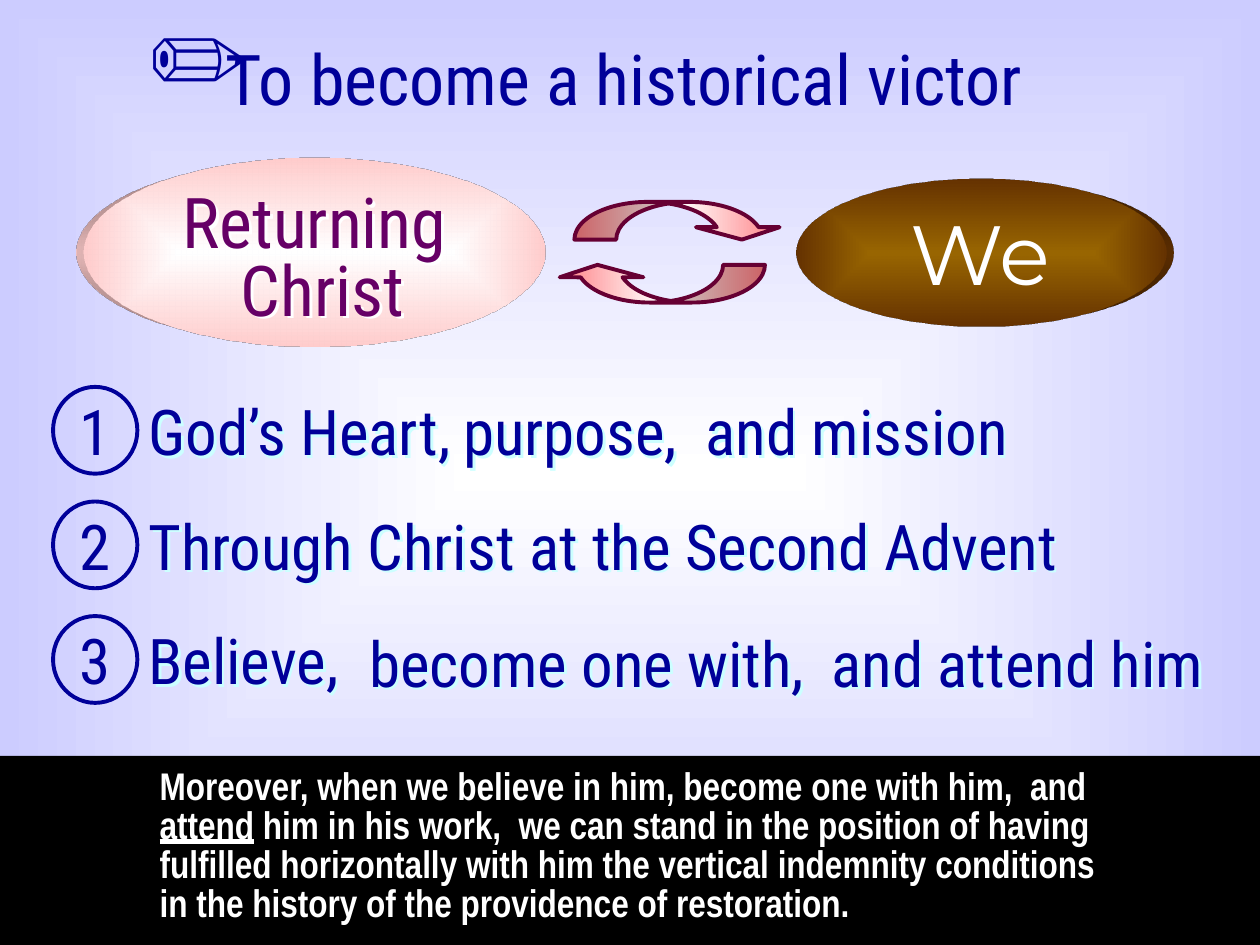
from lxml import etree
from pptx import Presentation
from pptx.dml.color import RGBColor
from pptx.enum.shapes import MSO_SHAPE
from pptx.enum.text import MSO_ANCHOR, MSO_AUTO_SIZE, PP_ALIGN
from pptx.oxml import parse_xml
from pptx.oxml.ns import qn
from pptx.util import Cm, Pt

RECT, OVAL, CURVE = MSO_SHAPE.RECTANGLE, MSO_SHAPE.OVAL, MSO_SHAPE.CURVED_LEFT_ARROW
MIDDLE, TOP = MSO_ANCHOR.MIDDLE, MSO_ANCHOR.TOP
LEFT, CENTER = PP_ALIGN.LEFT, PP_ALIGN.CENTER
GROW = MSO_AUTO_SIZE.SHAPE_TO_FIT_TEXT
ROBOTO = "Roboto Condensed"
NS = 'xmlns:a="http://schemas.openxmlformats.org/drawingml/2006/main"'
HEX = {
    "navy": "000099", "white": "FFFFFF", "black": "000000", "lilac": "CCCCFF",
    "pink": "FFCCCC", "plum": "660066", "gold": "996600", "brown": "663300",
    "coral": "FF7C80", "wine": "660033", "ice": "CCFFFF",
}
FIRST, PITCH = 7.8, 2.31
ROWS = [
    [(2.74, 6.78, 0, "God’s Heart,"), (9.09, 5.08, 0, "purpose,"),
     (13.97, 6.99, 0, "and mission")],
    [(2.74, 19.69, 0, "Through Christ at the Second Advent")],
    [(2.74, 4.65, 0, "Believe,"), (7.19, 9.73, 0.05, "become one with,"),
     (16.51, 8.46, 0.05, "and attend him")],
]


def color(name):
    return RGBColor.from_string(HEX[name])


def blend(fill, root, stops, angle=None):
    fill.gradient()
    grad = root.find(".//" + qn("a:gradFill"))
    marks = "".join(
        f'<a:gs pos="{pos * 1000}"><a:srgbClr val="{HEX[name]}"/></a:gs>'
        for pos, name in stops)
    if angle is None:
        way = ('<a:path path="shape"><a:fillToRect l="50000" t="50000" '
               'r="50000" b="50000"/></a:path>')
    else:
        way = f'<a:lin ang="{angle * 60000}" scaled="1"/>'
    fresh = parse_xml(
        f'<a:gradFill {NS} rotWithShape="1"><a:gsLst>{marks}</a:gsLst>{way}</a:gradFill>')
    grad.getparent().replace(grad, fresh)


def shape(parent, kind, box, fill=None, line=None):
    item = parent.add_shape(kind, *map(Cm, box))
    item.shadow.inherit = False
    if fill:
        item.fill.solid()
        item.fill.fore_color.rgb = color(fill)
    else:
        item.fill.background()
    if line:
        item.line.color.rgb = color(line)
        item.line.width = Pt(2.25)
    else:
        item.line.fill.background()
    return item


def write(item, paras, size, tint, font=ROBOTO, align=LEFT, anchor=MIDDLE,
          wrap=False, bold=False, space=None):
    frame = item.text_frame
    frame.word_wrap = wrap
    frame.vertical_anchor = anchor
    if wrap:
        frame.auto_size = GROW
    for i, runs in enumerate(paras):
        para = frame.add_paragraph() if i else frame.paragraphs[0]
        para.alignment = align
        if space:
            para.line_spacing = space
        for text, under in runs:
            run = para.add_run()
            run.text = text
            run.font.size = Pt(size)
            run.font.name = font
            run.font.bold = bold
            run.font.underline = under
            run.font.color.rgb = color(tint)


def label(parent, box, paras, size, tint, glow=None, **style):
    item = parent.add_textbox(*map(Cm, box))
    write(item, paras, size, tint, **style)
    if glow:
        item._element.spPr.append(parse_xml(
            f'<a:effectLst {NS}><a:outerShdw dist="28400" dir="2700000" algn="ctr" '
            f'rotWithShape="0"><a:srgbClr val="{HEX[glow]}"/></a:outerShdw></a:effectLst>'))


def disc(parent, box, inner, outer, side):
    item = shape(parent, OVAL, box)
    props = item._element.spPr
    blend(item.fill, props, [(0, inner), (100, outer)])
    scene = parse_xml(
        f'<a:scene3d {NS}><a:camera prst="legacyPerspective{side}"/>'
        '<a:lightRig rig="legacyFlat3" dir="b"/></a:scene3d>')
    depth = etree.SubElement(props, qn("a:sp3d"), extrusionH="430200",
                             prstMaterial="legacyMatte")
    tone = etree.SubElement(depth, qn("a:extrusionClr"))
    etree.SubElement(tone, qn("a:srgbClr"), val=HEX[outer])
    depth.addprevious(scene)
    return item


def arrow(parent, left, top, turn):
    item = shape(parent, CURVE, (left, top, 0.76, 4.22), line="wine")
    item.rotation = turn
    for i, value in enumerate((1.11, 2.22, 0.33)):
        item.adjustments[i] = value
    blend(item.fill, item._element.spPr,
          [(0, "coral"), (50, "white"), (100, "coral")], 90)


def points(parent):
    for i, parts in enumerate(ROWS):
        top = FIRST + i * PITCH
        ring = shape(parent, OVAL, (1.07, top, 1.7, 1.75), line="navy")
        write(ring, [[(str(i + 1), False)]], 36, "navy", align=CENTER)
        for left, width, drop, text in parts:
            label(parent, (left, top + drop, width, 1.75), [[(text, False)]],
                  36, "navy", glow="ice")


def main():
    deck = Presentation()
    deck.slide_width, deck.slide_height = Cm(25.4), Cm(19.05)
    slide = deck.slides.add_slide(deck.slide_layouts[6])
    blend(slide.background.fill, slide._element, [(0, "white"), (100, "lilac")])
    top = slide.shapes

    shape(top, RECT, (0, 15.24, 25.4, 4.01), "black")
    label(top, (2.97, 15.37, 19.48, 3.45), [[
        ("Moreover, when we believe in him, become one with him,  and ", False),
        ("attend", True),
        (" him in his work,  we can stand in the position of having fulfilled "
         "horizontally with him the vertical indemnity conditions in the history "
         "of the providence of restoration.", False),
    ]], 22, "white", font="Arial Narrow", anchor=TOP, wrap=True, bold=True, space=0.85)
    points(top)

    label(top, (4.01, 0.58, 17.15, 1.96),
          [[("To become a historical victor", False)]], 40, "navy", align=CENTER)
    label(top, (2.74, 0.81, 1.07, 1.52), [[("✏", False)]], 60, "navy",
          font="Times New Roman", anchor=TOP, wrap=True, bold=True, space=0.5)

    people = disc(top, (16.05, 3.61, 7.44, 2.97), "gold", "brown", "Right")
    write(people, [[("We", False)]], 48, "white", font="Montserrat",
          align=CENTER, space=0.9)
    people.text_frame.margin_top = Cm(0.35)

    christ = top.add_group_shape().shapes
    disc(christ, (1.7, 3.18, 9.3, 3.81), "white", "pink", "Left")
    label(christ, (2.62, 3.81, 7.44, 2.97),
          [[("Returning", False)], [(" Christ", False)]], 40, "plum", glow="white",
          align=CENTER, anchor=TOP, wrap=True, space=0.8)

    arrow(top, 13.31, 2.34, 270)
    arrow(top, 12.93, 3.61, 90)
    deck.save("out.pptx")


if __name__ == "__main__":
    main()
